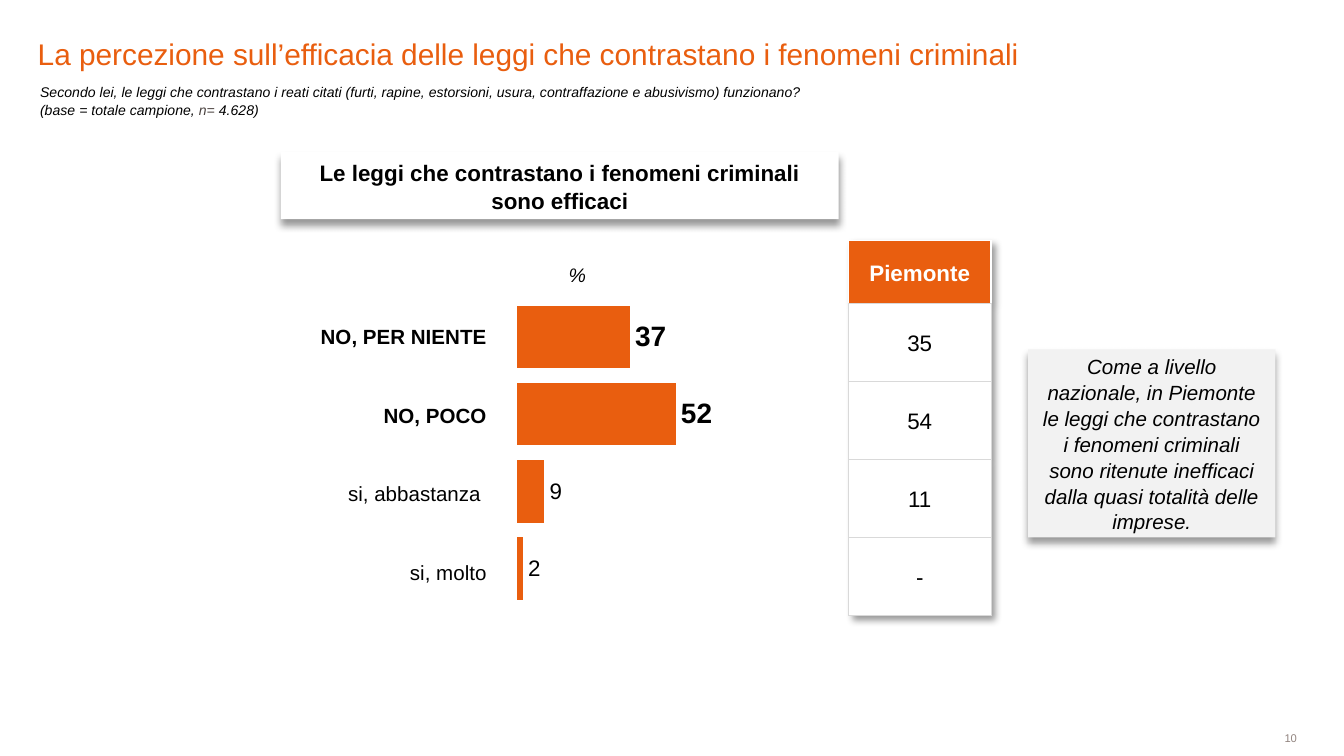
from lxml import etree
from pptx import Presentation
from pptx.chart.data import CategoryChartData
from pptx.dml.color import RGBColor
from pptx.enum.chart import XL_CHART_TYPE, XL_LABEL_POSITION
from pptx.enum.shapes import MSO_SHAPE
from pptx.enum.text import MSO_ANCHOR, PP_ALIGN
from pptx.oxml import parse_xml
from pptx.oxml.ns import nsdecls, qn
from pptx.util import Pt

LEFT, MID, RIGHT = PP_ALIGN.LEFT, PP_ALIGN.CENTER, PP_ALIGN.RIGHT
TOP, HALF, LOW = MSO_ANCHOR.TOP, MSO_ANCHOR.MIDDLE, MSO_ANCHOR.BOTTOM
RECT = MSO_SHAPE.RECTANGLE
BARS = XL_CHART_TYPE.BAR_CLUSTERED
OUT_END = XL_LABEL_POSITION.OUTSIDE_END
FONT = "Arial"
COLORS = {
    "orange": "E95E0F", "black": "000000", "white": "FFFFFF",
    "brown": "4A423F", "gray": "928580", "pale": "F2F2F2", "rule": "D9D9D9",
}


def color(name):
    return RGBColor.from_string(COLORS[name])


def style(font, size, hue="black", bold=False, italic=False):
    font.name, font.size = FONT, Pt(size)
    font.bold, font.italic = bold, italic
    font.color.rgb = color(hue)


def fill_text(frame, text, size, align=LEFT, **look):
    frame.text = text
    for para in frame.paragraphs:
        para.alignment = align
        para.line_spacing = 1.05
        for run in para.runs:
            style(run.font, size, **look)


def set_inset(item, side, top=None, low=None):
    item.margin_left = item.margin_right = Pt(side)
    item.margin_top = Pt(side if top is None else top)
    item.margin_bottom = Pt(side if low is None else low)


def add_text(slide, box, text, size, align=LEFT, anchor=TOP, inset=True, **look):
    frame = slide.shapes.add_textbox(*map(Pt, box)).text_frame
    frame.word_wrap = True
    frame.vertical_anchor = anchor
    if not inset:
        set_inset(frame, 0)
    fill_text(frame, text, size, align, **look)
    return frame


def shadow(angle):
    return parse_xml(
        f'<a:effectLst {nsdecls("a")}><a:outerShdw blurRad="{Pt(4)}" dist="{Pt(3)}" '
        f'dir="{angle * 60000}" algn="t" rotWithShape="0"><a:srgbClr val="{COLORS["black"]}">'
        '<a:alpha val="40000"/></a:srgbClr></a:outerShdw></a:effectLst>')


def add_card(slide, box, fill, text, size, **look):
    card = slide.shapes.add_shape(RECT, *map(Pt, box))
    card.fill.solid()
    card.fill.fore_color.rgb = color(fill)
    card.line.fill.background()
    card._element.spPr.append(shadow(90))
    card.text_frame.word_wrap = True
    card.text_frame.vertical_anchor = HALF
    fill_text(card.text_frame, text, size, MID, **look)


def set_edges(cell, hues, width):
    props = cell._tc.get_or_add_tcPr()
    for side, hue in zip("LRTB", hues):
        line = etree.SubElement(props, qn(f"a:ln{side}"), w=str(Pt(width)))
        solid = etree.SubElement(line, qn("a:solidFill"))
        etree.SubElement(solid, qn("a:srgbClr"), val=COLORS[hue])


def add_column(slide, box, heights):
    table = slide.shapes.add_table(len(heights), 1, *map(Pt, box)).table
    table.first_row = table.horz_banding = False
    table.columns[0].width = Pt(box[2])
    for row, height in zip(table.rows, heights):
        row.height = Pt(height)
    return table


def fill_cell(cell, text, size, align, fill=None, **look):
    cell.vertical_anchor = HALF
    set_inset(cell, 0.7, low=0)
    fill_text(cell.text_frame, text, size, align, **look)
    if fill:
        cell.fill.solid()
        cell.fill.fore_color.rgb = color(fill)
    else:
        cell.fill.background()


def add_labels(slide, names):
    table = add_column(slide, (150.5, 159.1, 110.9, 168.4), [42.1] * len(names))
    for i, name in enumerate(names):
        fill_cell(table.cell(i, 0), name, 11, RIGHT, bold=i < 2)


def add_region(slide, name, values):
    table = add_column(slide, (454.6, 128.9, 76.3, 200.9), [33.7] + [41.8] * len(values))
    table._tbl.tblPr.insert(0, shadow(45))
    head = table.cell(0, 0)
    set_edges(head, ["white"] * 3 + ["rule"], 1)
    fill_cell(head, name, 12, MID, "orange", hue="white", bold=True)
    for i, value in enumerate(values, 1):
        cell = table.cell(i, 0)
        set_edges(cell, ["rule"] * 4, 0.25)
        fill_cell(cell, value, 12, MID, "white")


def add_bars(slide, box, values):
    data = CategoryChartData(number_format="0")
    data.categories = [str(i) for i in range(1, len(values) + 1)]
    data.add_series("Series 1", values)
    chart = slide.shapes.add_chart(BARS, *map(Pt, box), data).chart
    chart.has_legend = chart.has_title = False
    style(chart.font, 13.5)

    # Hidden axes, first answer on top
    cats, scale = chart.category_axis, chart.value_axis
    cats.reverse_order = True
    cats.visible = scale.visible = False
    scale.has_major_gridlines = False
    scale.minimum_scale, scale.maximum_scale, scale.major_unit = 0, 100, 10

    plot = chart.plots[0]
    plot.gap_width = 24
    plot.vary_by_categories = False
    series = plot.series[0]
    series.format.fill.solid()
    series.format.fill.fore_color.rgb = color("orange")

    # The two "no" answers carry larger labels
    for i in range(len(values)):
        label = series.points[i].data_label
        style(label.font, 15 if i < 2 else 12, bold=i < 2)
        label.position = OUT_END
    labels = series.data_labels
    labels.show_value = True
    labels.number_format, labels.number_format_is_linked = "0", False
    style(labels.font, 12)

    # Fixed place of the plot inside the chart
    area = chart._chartSpace.chart.plotArea
    for old in area.findall(qn("c:layout")):
        area.remove(old)
    layout = etree.Element(qn("c:layout"))
    manual = etree.SubElement(layout, qn("c:manualLayout"))
    parts = {"layoutTarget": "inner", "xMode": "edge", "yMode": "edge",
             "x": "0.282", "y": "0", "w": "0.496", "h": "0.721"}
    for tag, val in parts.items():
        etree.SubElement(manual, qn(f"c:{tag}"), val=val)
    area.insert(0, layout)


def main():
    deck = Presentation()
    deck.slide_width, deck.slide_height = Pt(720), Pt(405)
    slide = deck.slides.add_slide(deck.slide_layouts[6])

    # Heading and question
    add_text(slide, (20.2, 11.5, 589.7, 26.6),
             "La percezione sull’efficacia delle leggi che contrastano i fenomeni criminali",
             16, anchor=LOW, inset=False, hue="orange")
    ask = add_text(slide, (14.4, 41, 501.8, 25.2),
                   "Secondo lei, le leggi che contrastano i reati citati (furti, rapine, "
                   "estorsioni, usura, contraffazione e abusivismo) funzionano?\n"
                   "(base = totale campione, ", 7.5, italic=True)
    for text, hue in (("n=", "brown"), (" 4.628)", "black")):
        run = ask.paragraphs[1].add_run()
        run.text = text
        style(run.font, 7.5, hue, italic=True)

    # Chart with its title, unit and answers
    add_card(slide, (150.5, 81.4, 298.8, 36), "white",
             "Le leggi che contrastano i fenomeni criminali sono efficaci", 12, bold=True)
    add_bars(slide, (183.6, 159.8, 330.5, 229.7), [37, 52, 9, 2])
    add_labels(slide, ["NO, PER NIENTE", "NO, POCO", "si, abbastanza ", "si, molto"])
    add_text(slide, (298.8, 140.4, 20.9, 13), "%", 10.5, MID, HALF, False, italic=True)

    # Regional figures and comment
    add_region(slide, "Piemonte", ["35", "54", "11", "-"])
    add_card(slide, (550.8, 187.2, 132.5, 100.8), "pale",
             "Come a livello nazionale, in Piemonte le leggi che contrastano i fenomeni "
             "criminali sono ritenute inefficaci dalla quasi totalità delle imprese.",
             11, italic=True)

    # Page number
    add_text(slide, (598.3, 391.7, 96.5, 6.5), "10", 6, RIGHT, HALF, False, hue="gray")

    deck.save("out.pptx")


if __name__ == "__main__":
    main()
